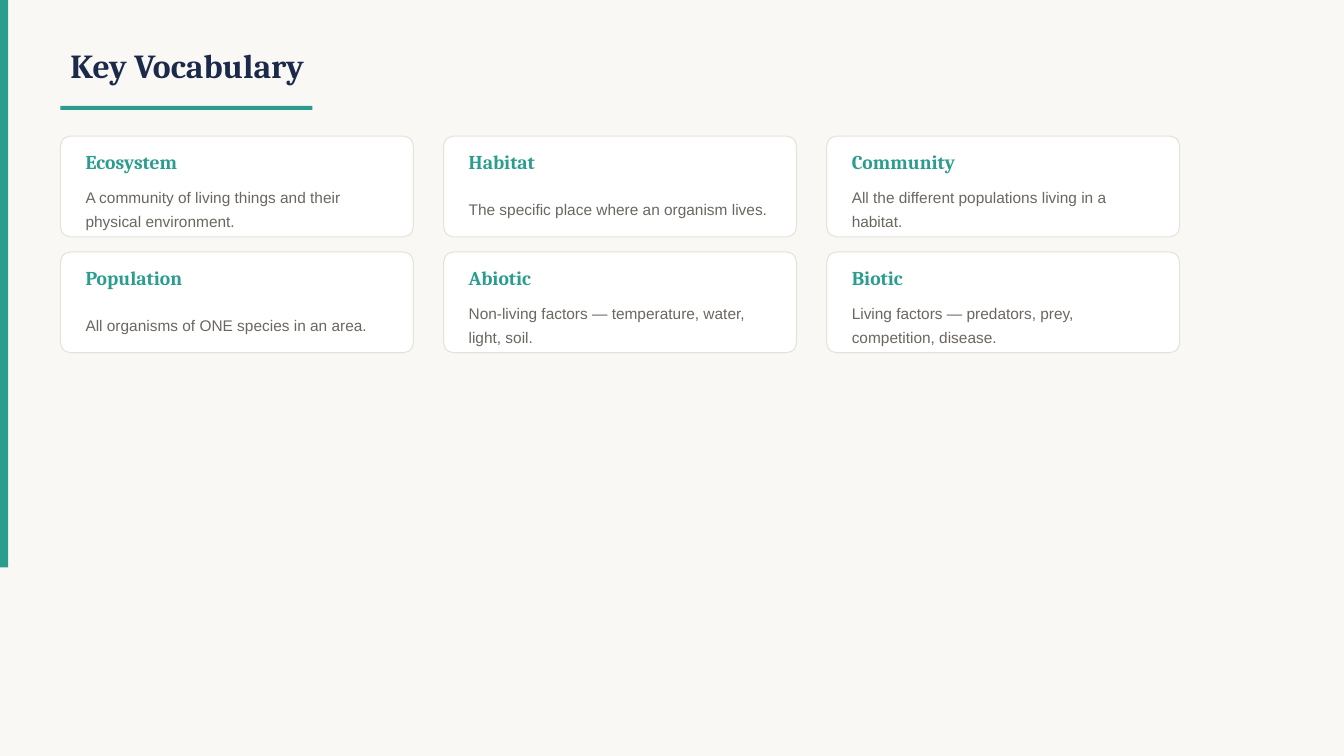
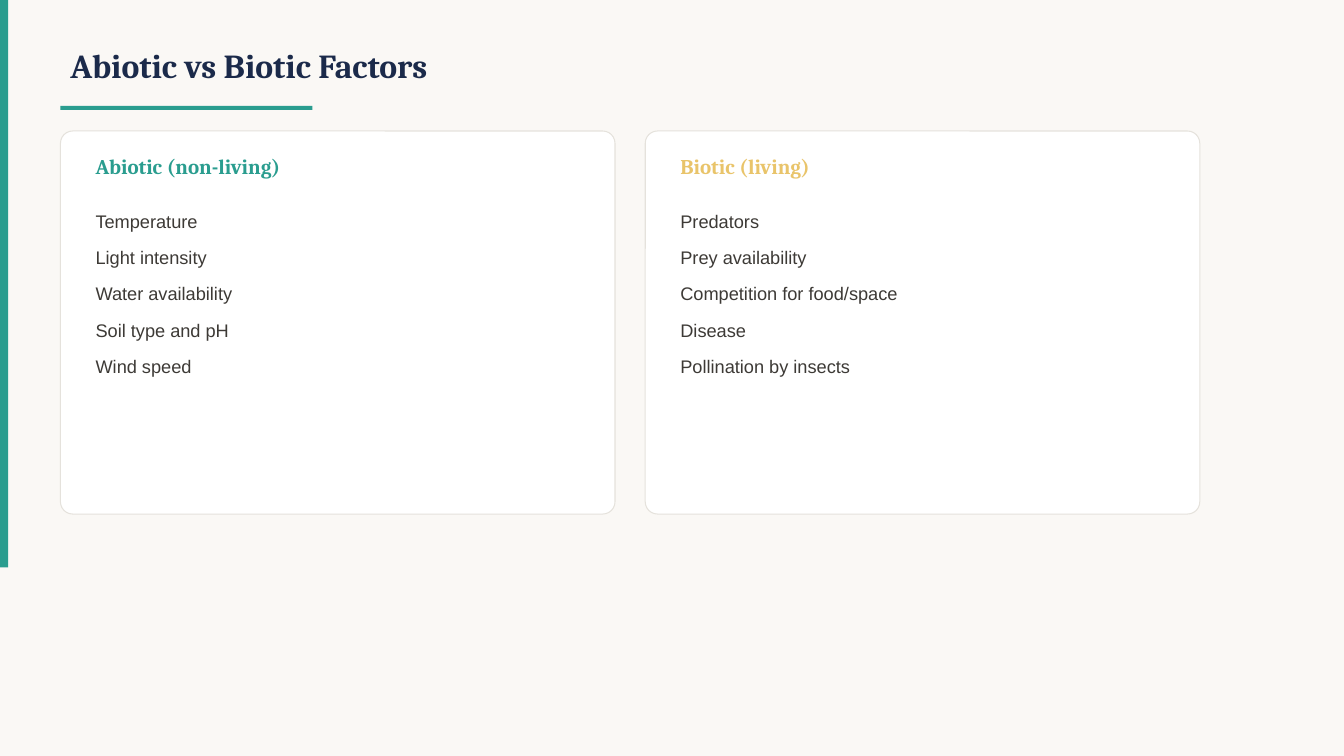
from pptx import Presentation
from pptx import util as u
from pptx.dml.color import RGBColor
from pptx.enum import shapes, text

PX = 9144
COLORS = {
    "paper": "FAF8F5",
    "white": "FFFFFF",
    "border": "E5E2DC",
    "navy": "1B2A4A",
    "teal": "2A9D8F",
    "gold": "E9C46A",
    "gray": "6B6660",
    "ink": "3D3A36",
}
STYLES = {
    "title": {"name": "Cambria", "size": u.Pt(24), "bold": True},
    "term": {"name": "Cambria", "size": u.Pt(14), "bold": True},
    "heading": {"name": "Cambria", "size": u.Pt(15), "bold": True},
    "definition": {"name": "Arial", "size": u.Pt(11)},
    "item": {"name": "Arial", "size": u.Pt(13)},
}
SPACING = {
    "definition": {"line_spacing": 1.3},
    "item": {"line_spacing": 1.4, "space_after": u.Pt(4)},
}
MARGIN = 60
GAP = 30

VOCABULARY = [
    ("Ecosystem", "A community of living things and their physical environment."),
    ("Habitat", "The specific place where an organism lives."),
    ("Community", "All the different populations living in a habitat."),
    ("Population", "All organisms of ONE species in an area."),
    ("Abiotic", "Non-living factors — temperature, water, light, soil."),
    ("Biotic", "Living factors — predators, prey, competition, disease."),
]
FACTORS = [
    ("Abiotic (non-living)", "teal",
     ["Temperature", "Light intensity", "Water availability",
      "Soil type and pH", "Wind speed"]),
    ("Biotic (living)", "gold",
     ["Predators", "Prey availability", "Competition for food/space",
      "Disease", "Pollination by insects"]),
]


def rgb(color):
    return RGBColor.from_string(COLORS[color])


def px(*lengths):
    return [u.Emu(n * PX) for n in lengths]


def set_all(target, values):
    for name, value in values.items():
        setattr(target, name, value)


def add_box(s, kind, box, fill):
    sp = s.shapes.add_shape(kind, *px(*box))
    sp.shadow.inherit = False
    sp.fill.solid()
    sp.fill.fore_color.rgb = rgb(fill)
    sp.line.fill.background()
    return sp


def add_card(s, box, corner):
    sp = add_box(s, shapes.MSO_SHAPE.ROUNDED_RECTANGLE, box, "white")
    sp.adjustments[0] = corner
    sp.line.color.rgb = rgb("border")
    sp.line.width = u.Pt(0.75)


def add_text(s, box, lines, style, color, anchor=text.MSO_ANCHOR.MIDDLE):
    tf = s.shapes.add_textbox(*px(*box)).text_frame
    set_all(tf, {"word_wrap": True, "vertical_anchor": anchor})
    for i, line in enumerate(lines):
        p = tf.paragraphs[0] if i == 0 else tf.add_paragraph()
        set_all(p, SPACING.get(style, {}))
        r = p.add_run()
        r.text = line
        set_all(r.font, STYLES[style])
        r.font.color.rgb = rgb(color)


def add_base(prs, title):
    s = prs.slides.add_slide(prs.slide_layouts[6])
    s.background.fill.solid()
    s.background.fill.fore_color.rgb = rgb("paper")
    rect = shapes.MSO_SHAPE.RECTANGLE
    add_box(s, rect, (0, 0, 8, 563), "teal")
    add_text(s, (MARGIN, 30, 1000, 70), [title], "title", "navy")
    add_box(s, rect, (MARGIN, 105, 250, 4), "teal")
    return s


def add_term_card(s, box, term, definition):
    x, y, w, h = box
    add_card(s, box, 0.1)
    add_text(s, (x + 15, y + 8, w - 30, 35), [term], "term", "teal")
    add_text(s, (x + 15, y + 45, w - 30, h - 50), [definition], "definition", "gray")


def add_factor_card(s, box, heading, color, items):
    x, y, w, h = box
    add_card(s, box, 0.032)
    add_text(s, (x + 25, y + 15, w - 50, 40), [heading], "heading", color)
    add_text(s, (x + 25, y + 65, w - 50, h - 90), items, "item", "ink",
             text.MSO_ANCHOR.TOP)


def add_vocabulary_slide(prs):
    s = add_base(prs, "Key Vocabulary")
    w, h = 350, 100
    for i, (term, definition) in enumerate(VOCABULARY):
        row, col = divmod(i, 3)
        box = (MARGIN + col * (w + GAP), 135 + row * (h + 15), w, h)
        add_term_card(s, box, term, definition)


def add_factors_slide(prs):
    s = add_base(prs, "Abiotic vs Biotic Factors")
    w, h = 550, 380
    for col, factor in enumerate(FACTORS):
        add_factor_card(s, (MARGIN + col * (w + GAP), 130, w, h), *factor)


def main():
    prs = Presentation()
    prs.slide_width, prs.slide_height = px(1333, 750)
    add_vocabulary_slide(prs)
    add_factors_slide(prs)
    prs.save("out.pptx")


if __name__ == "__main__":
    main()
